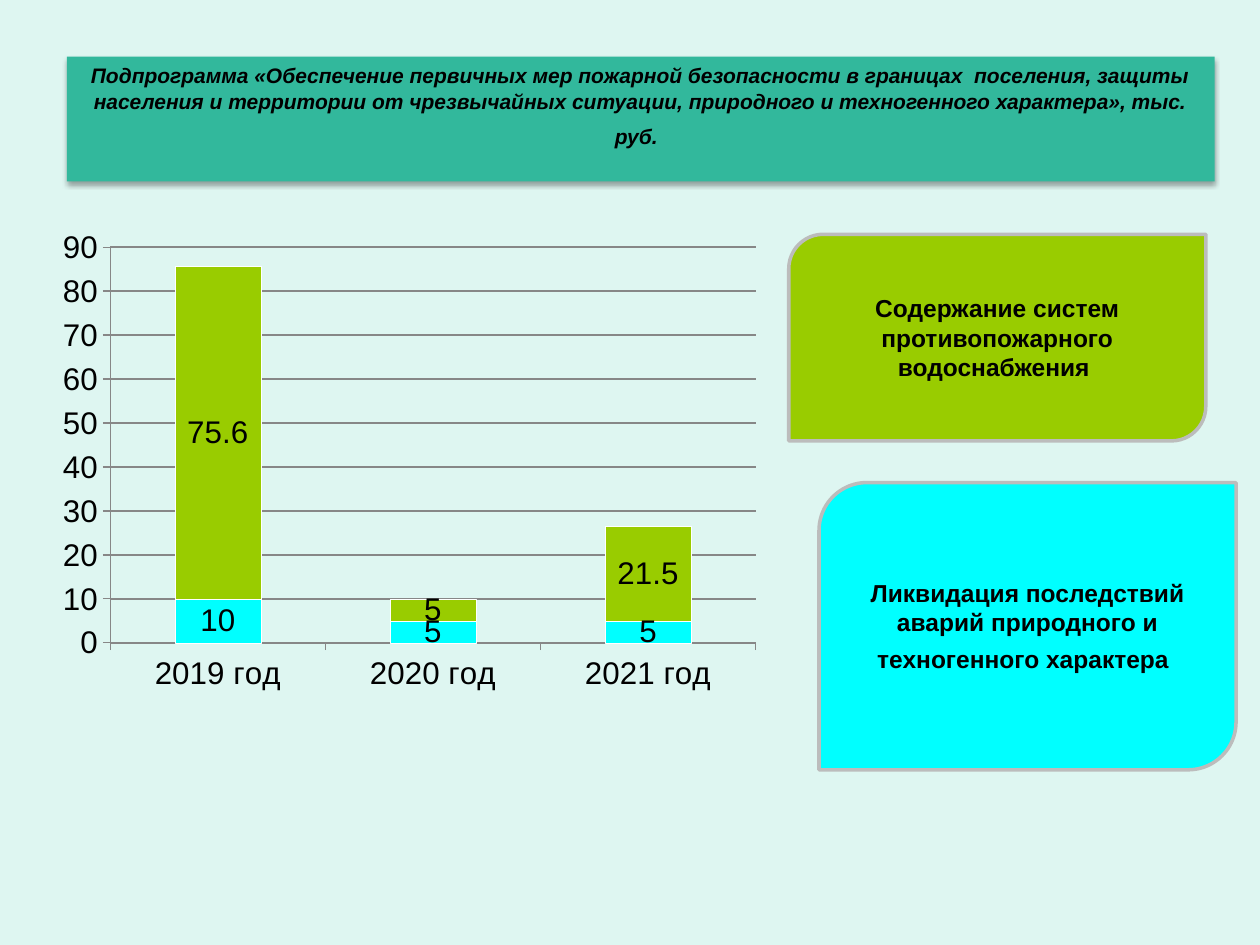
from pptx import Presentation
from pptx import util as u
from pptx.chart.data import CategoryChartData
from pptx.dml.color import RGBColor
from pptx.enum import chart as ch, shapes, text
from pptx.oxml import parse_xml
from pptx.oxml.ns import nsdecls

MINT = RGBColor(0xDE, 0xF6, 0xF1)
TEAL = RGBColor(0x32, 0xB8, 0x9C)
CYAN = RGBColor(0x00, 0xFF, 0xFF)
GREEN = RGBColor(0x99, 0xCC, 0x00)
SILVER = RGBColor(0xBC, 0xBC, 0xBC)
GRAY = RGBColor(0x87, 0x87, 0x87)
WHITE = RGBColor(0xFF, 0xFF, 0xFF)
BLACK = RGBColor(0x00, 0x00, 0x00)


def add_run(paragraph, wording, size=14, bold=False, italic=False,
            color=BLACK, font="Arial"):
    run = paragraph.add_run()
    run.text = wording
    run.font.name = font
    run.font.size = u.Pt(size)
    run.font.bold = bold
    run.font.italic = italic
    run.font.color.rgb = color


def set_plot_area(chart, x, y, w, h):
    """Fix the inner plot area, in fractions of the chart's size."""
    plot_area = chart.element.chart.plotArea
    for old in plot_area.xpath("c:layout"):
        plot_area.remove(old)
    values = "".join(f'<c:{tag} val="{value}"/>'
                     for tag, value in zip("xywh", (x, y, w, h)))
    plot_area.insert(0, parse_xml(
        f'<c:layout {nsdecls("c")}><c:manualLayout>'
        '<c:layoutTarget val="inner"/><c:xMode val="edge"/>'
        f'<c:yMode val="edge"/>{values}</c:manualLayout></c:layout>'))


def add_soft_shadow(shape):
    effects = shape.element.spPr.find(
        "{http://schemas.openxmlformats.org/drawingml/2006/main}effectLst")
    effects.append(parse_xml(
        f'<a:outerShdw {nsdecls("a")} blurRad="{u.Pt(3.1)}" '
        f'dist="{u.Pt(1.8)}" dir="5400000" rotWithShape="0">'
        '<a:srgbClr val="000000"><a:alpha val="35000"/></a:srgbClr>'
        '</a:outerShdw>'))


class SlideBuilder:
    font = "Arial"
    chart_size = 17.9

    def __init__(self, slide):
        self.slide = slide
        slide.background.fill.solid()
        slide.background.fill.fore_color.rgb = MINT

    def panel(self, preset, box, fill, anchor):
        """Add a filled shape and return it with its centred paragraph."""
        shape = self.slide.shapes.add_shape(preset, *map(u.Inches, box))
        shape.shadow.inherit = False
        shape.fill.solid()
        shape.fill.fore_color.rgb = fill
        shape.line.fill.background()
        frame = shape.text_frame
        frame.word_wrap = True
        frame.vertical_anchor = anchor
        frame.paragraphs[0].alignment = text.PP_ALIGN.CENTER
        return shape, frame.paragraphs[0]

    def title(self, wording, box):
        banner, paragraph = self.panel(shapes.MSO_SHAPE.RECTANGLE, box, TEAL,
                                       text.MSO_ANCHOR.TOP)
        add_soft_shadow(banner)
        add_run(paragraph, wording, size=12, bold=True, italic=True)
        add_run(paragraph, " ", size=18)

    def legend_card(self, wording, box, fill, end_size):
        card, paragraph = self.panel(
            shapes.MSO_SHAPE.ROUND_2_DIAG_RECTANGLE, box, fill,
            text.MSO_ANCHOR.MIDDLE)
        card.line.color.rgb = SILVER
        card.line.width = u.Pt(2)
        add_run(paragraph, wording, bold=True)
        add_run(paragraph, " ", size=end_size)

    def stacked_chart(self, years, series, box):
        data = CategoryChartData()
        data.categories = years
        for name, values, _ in series:
            data.add_series(name, values)
        chart = self.slide.shapes.add_chart(
            ch.XL_CHART_TYPE.COLUMN_STACKED, *map(u.Inches, box), data).chart
        chart.has_legend = False
        chart.has_title = False
        chart.font.name = self.font
        chart.font.size = u.Pt(self.chart_size)
        chart.font.color.rgb = BLACK
        set_plot_area(chart, 0.142, 0.037, 0.83, 0.546)

        plot = chart.plots[0]
        plot.gap_width = 150
        plot.overlap = 100
        plot.vary_by_categories = False
        for bars, (_, _, color) in zip(plot.series, series):
            bars.format.fill.solid()
            bars.format.fill.fore_color.rgb = color
            bars.format.line.color.rgb = WHITE
            bars.format.line.width = u.Pt(0.25)
            bars.data_labels.show_value = True
            bars.data_labels.position = ch.XL_LABEL_POSITION.CENTER

        for axis in (chart.category_axis, chart.value_axis):
            axis.major_tick_mark = ch.XL_TICK_MARK.OUTSIDE
            axis.minor_tick_mark = ch.XL_TICK_MARK.NONE
            axis.format.line.color.rgb = GRAY
            axis.format.line.width = u.Pt(0.75)
        amounts = chart.value_axis
        amounts.minimum_scale, amounts.maximum_scale = 0, 90
        amounts.major_unit = 10
        amounts.has_major_gridlines = True
        amounts.major_gridlines.format.line.color.rgb = GRAY
        amounts.major_gridlines.format.line.width = u.Pt(1)


def main():
    deck = Presentation()
    deck.slide_width, deck.slide_height = u.Inches(10), u.Inches(7.5)
    builder = SlideBuilder(deck.slides.add_slide(deck.slide_layouts[6]))

    builder.stacked_chart(
        ["2019 год", "2020 год", "2021 год"],
        [("Series 1", (10, 5, 5), CYAN),
         ("Series 2", (75.6, 5, 21.5), GREEN)],
        (0, 1.75, 6.17, 5.75))
    builder.legend_card(
        "Ликвидация последствий аварий природного и техногенного характера",
        (6.5, 3.83, 3.31, 2.28), CYAN, end_size=18)
    builder.legend_card("Содержание систем противопожарного водоснабжения",
                        (6.26, 1.86, 3.31, 1.64), GREEN, end_size=14)
    builder.title(
        "Подпрограмма «Обеспечение первичных мер пожарной безопасности "
        "в границах  поселения, защиты населения и территории от "
        "чрезвычайных ситуации, природного и техногенного характера», "
        "тыс. руб.", (0.53, 0.45, 9.11, 0.99))
    deck.save("out.pptx")


if __name__ == "__main__":
    main()
